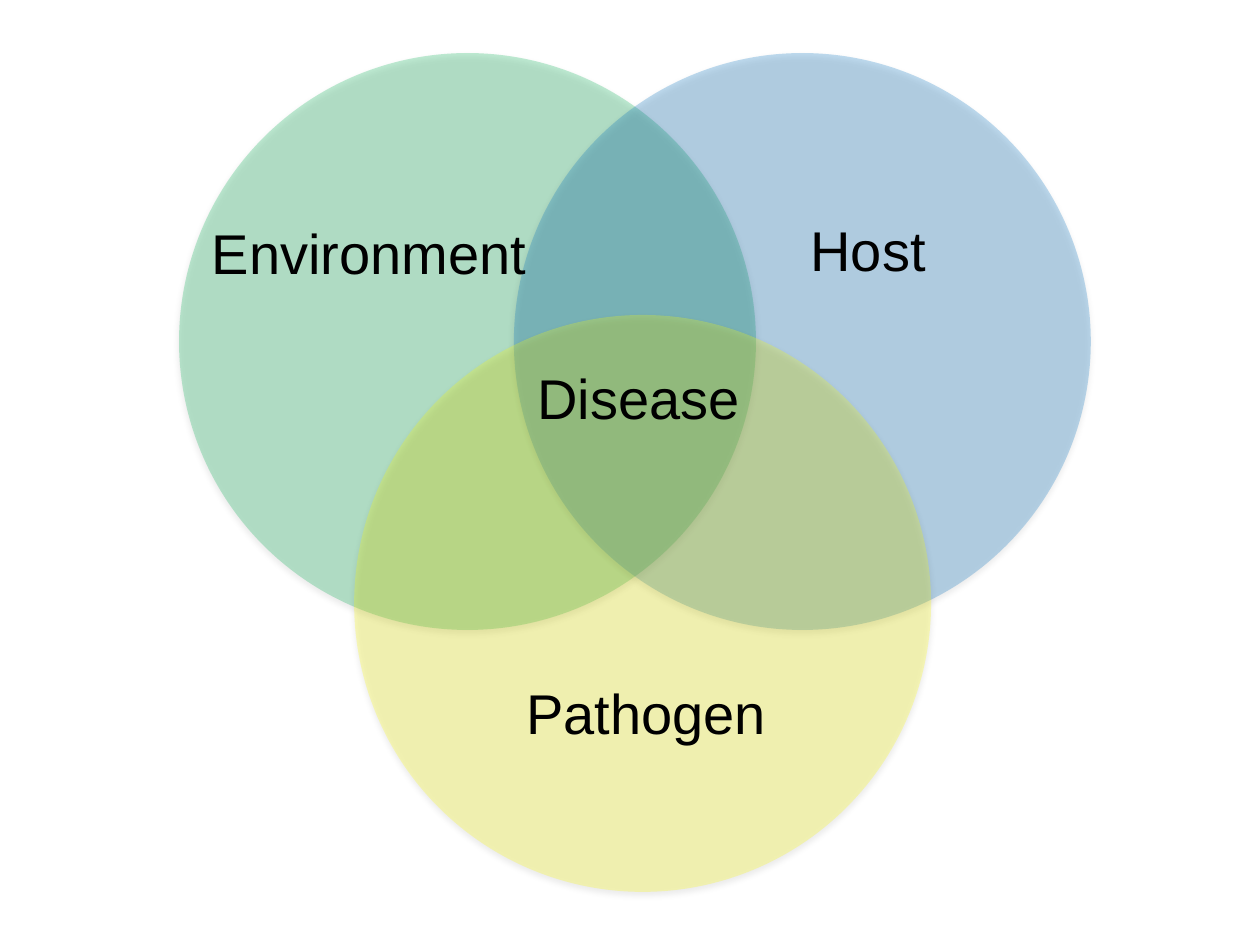
from dataclasses import dataclass

from lxml.etree import SubElement
from pptx import Presentation
from pptx.dml.color import RGBColor
from pptx.enum.shapes import MSO_SHAPE as Shape
from pptx.enum.text import MSO_AUTO_SIZE as AutoSize
from pptx.oxml.ns import qn
from pptx.slide import Slide
from pptx.util import Cm, Pt


@dataclass(frozen=True)
class Theme:
    font: str = "Arial"
    label_size: int = 32
    text: str = "000000"
    shadow: str = "000000"
    environment: str = "00B050"
    host: str = "0070C0"
    pathogen: str = "FFFF00"
    fill_opacity: int = 25
    shadow_opacity: int = 32
    shadow_blur: float = 3.5
    shadow_distance: float = 2.2


@dataclass(frozen=True)
class Circle:
    left: float
    top: float
    color: str


@dataclass(frozen=True)
class Label:
    text: str
    left: float
    top: float
    width: float


THEME = Theme()
DIAMETER = 11.63
LABEL_HEIGHT = 1.62
UPPER_ROW = 1.07

CIRCLES = [
    Circle(3.61, UPPER_ROW, THEME.environment),
    Circle(10.36, UPPER_ROW, THEME.host),
    Circle(7.14, 6.35, THEME.pathogen),
]
LABELS = [
    Label("Environment", 4.02, 4.29, 7.2),
    Label("Host", 16.09, 4.23, 4.87),
    Label("Pathogen", 10.36, 13.55, 5.64),
    Label("Disease", 10.58, 7.2, 4.87),
]


def add_alpha(color, percent: int) -> None:
    """Make a colour element partly transparent."""
    SubElement(color, qn("a:alpha"), val=str(percent * 1000))


def draw_circle(s: Slide, circle: Circle) -> None:
    sp = s.shapes.add_shape(Shape.OVAL, Cm(circle.left), Cm(circle.top),
                            Cm(DIAMETER), Cm(DIAMETER))
    sp.fill.solid()
    sp.fill.fore_color.rgb = RGBColor.from_string(circle.color)
    sp.line.fill.background()
    sp.shadow.inherit = False
    sp_pr = sp.element.spPr
    add_alpha(sp_pr.find(f"{qn('a:solidFill')}/{qn('a:srgbClr')}"),
              THEME.fill_opacity)

    # Soft shadow straight below
    shadow = SubElement(sp_pr.find(qn("a:effectLst")), qn("a:outerShdw"),
                        blurRad=str(Pt(THEME.shadow_blur)),
                        dist=str(Pt(THEME.shadow_distance)),
                        dir=str(90 * 60000), rotWithShape="0")
    add_alpha(SubElement(shadow, qn("a:srgbClr"), val=THEME.shadow),
              THEME.shadow_opacity)


def draw_label(s: Slide, label: Label) -> None:
    sp = s.shapes.add_textbox(Cm(label.left), Cm(label.top),
                              Cm(label.width), Cm(LABEL_HEIGHT))
    tf = sp.text_frame
    tf.word_wrap = True
    tf.auto_size = AutoSize.SHAPE_TO_FIT_TEXT
    tf.text = label.text
    r = tf.paragraphs[0].runs[0]
    r.font.name = THEME.font
    r.font.size = Pt(THEME.label_size)
    r.font.color.rgb = RGBColor.from_string(THEME.text)


def main() -> None:
    prs = Presentation()
    prs.slide_width, prs.slide_height = Cm(25.4), Cm(19.05)
    s = prs.slides.add_slide(prs.slide_layouts[6])

    # Overlapping circles
    for circle in CIRCLES:
        draw_circle(s, circle)

    # Names of the three factors and of their overlap
    for label in LABELS:
        draw_label(s, label)

    prs.save("out.pptx")


if __name__ == "__main__":
    main()
